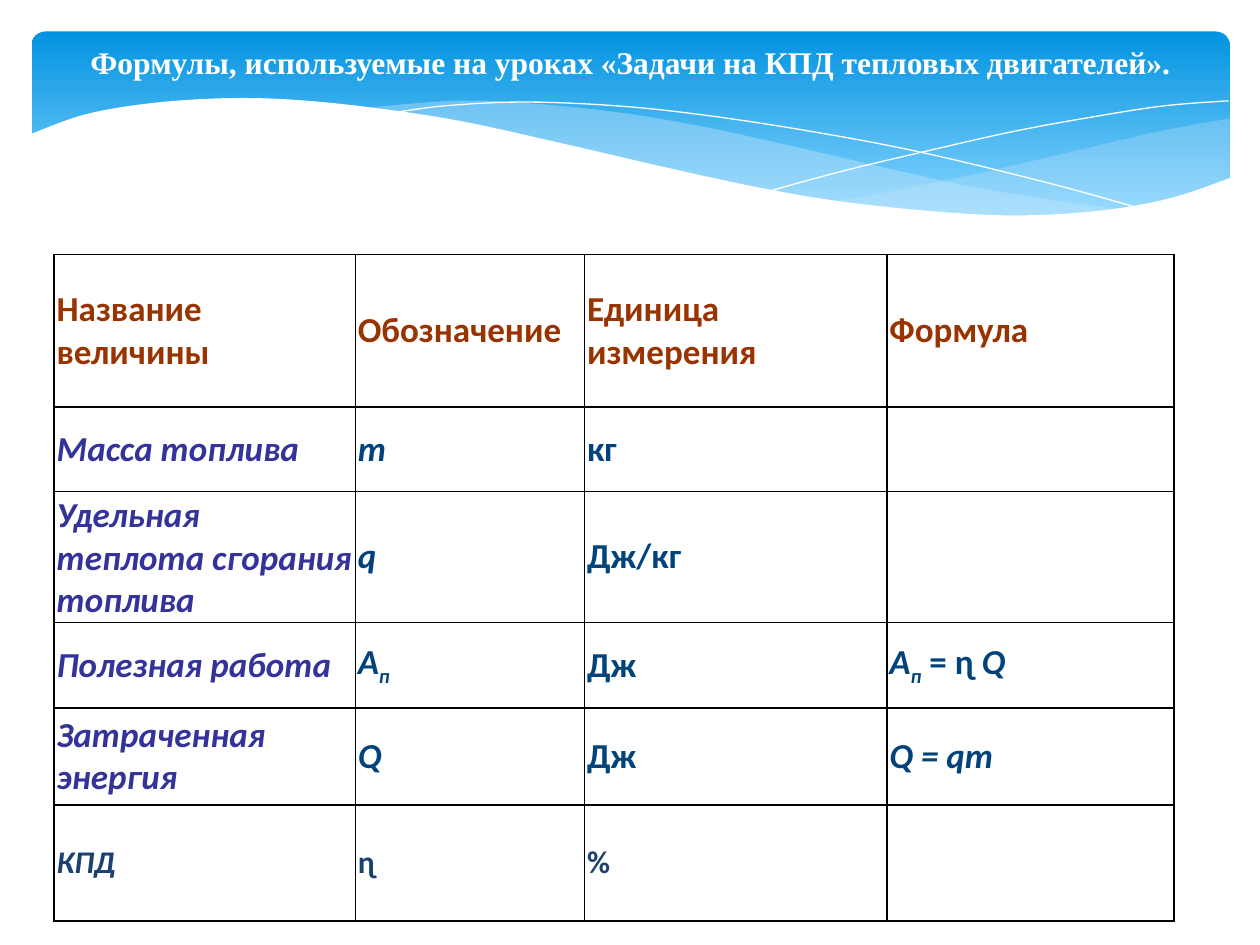
import pptx
import pptx.dml.color
import pptx.enum.text
import pptx.util
from lxml import etree
from pptx.oxml.ns import qn
from pptx.util import Inches


def color(code):
    return pptx.dml.color.RGBColor.from_string(code)


def smooth(knots, steps=6):
    """Points of a Catmull-Rom curve through the knots."""
    ends = [knots[0], *knots, knots[-1]]
    points = []
    for a, b, c, d in zip(ends, ends[1:], ends[2:], ends[3:]):
        for step in range(steps):
            t = step / steps
            points.append(tuple(
                q + t / 2 * (r - p + t * (2 * p - 5 * q + 4 * r - s
                                          + t * (3 * (q - r) + s - p)))
                for p, q, r, s in zip(a, b, c, d)))
    return points + [knots[-1]]


class SlideMaker:
    border = "000000"
    inset = Inches(0.02)

    def __init__(self, slide):
        self.slide = slide

    def panel(self, left, top, width, height, radius, stops):
        shape = self.slide.shapes.add_shape(
            pptx.enum.shapes.MSO_SHAPE.ROUNDED_RECTANGLE,
            Inches(left), Inches(top), Inches(width), Inches(height))
        shape.adjustments[0] = radius
        shape.shadow.inherit = False
        shape.line.fill.background()
        shape.fill.gradient()
        shape.fill.gradient_angle = 270
        for stop, (position, code) in zip(shape.fill.gradient_stops, stops):
            stop.position = position
            stop.color.rgb = color(code)

    def outline(self, points, fill=None, alpha=None, line=None):
        points = [(Inches(x), Inches(y)) for x, y in points]
        builder = self.slide.shapes.build_freeform(*points[0])
        builder.add_line_segments(points[1:], close=fill is not None)
        shape = builder.convert_to_shape()
        shape.shadow.inherit = False
        if fill:
            shape.fill.solid()
            shape.fill.fore_color.rgb = color(fill)
        else:
            shape.fill.background()
        if alpha:
            tint = shape.fill._xPr.find(".//" + qn("a:srgbClr"))
            etree.SubElement(tint, qn("a:alpha"), val=str(alpha * 1000))
        if line:
            shape.line.color.rgb = color(line)
            shape.line.width = 0
        else:
            shape.line.fill.background()

    def span(self, para, text, size, font, code, italic=False, baseline=0):
        span = para.add_run()
        span.text = text
        span.font.size = pptx.util.Pt(size)
        span.font.name = font
        span.font.bold = True
        span.font.italic = italic
        span.font.color.rgb = color(code)
        if baseline:
            span._r.get_or_add_rPr().set("baseline", str(baseline * 1000))

    def title(self, left, top, width, height, text):
        box = self.slide.shapes.add_textbox(
            Inches(left), Inches(top), Inches(width), Inches(height))
        box.text_frame.word_wrap = True
        para = box.text_frame.paragraphs[0]
        para.alignment = pptx.enum.text.PP_ALIGN.CENTER
        self.span(para, text, 18, "Times New Roman", "FFFFFF")

    def cell(self, cell, spans, size, code):
        cell.fill.background()
        cell.vertical_anchor = pptx.enum.text.MSO_ANCHOR.MIDDLE
        cell.margin_left = cell.margin_right = self.inset
        cell.margin_top = cell.margin_bottom = self.inset
        for text, italic, baseline in spans:
            self.span(cell.text_frame.paragraphs[0], text, size, "Calibri",
                      code, italic, baseline)
        # Borders stand before the fill in the cell properties
        properties = cell._tc.get_or_add_tcPr()
        for index, side in enumerate("LRTB"):
            edge = etree.Element(qn("a:ln" + side), w="12700")
            solid = etree.SubElement(edge, qn("a:solidFill"))
            etree.SubElement(solid, qn("a:srgbClr"), val=self.border)
            properties.insert(index, edge)

    def table(self, left, top, widths, heights, rows, style):
        frame = self.slide.shapes.add_table(
            len(heights), len(widths), Inches(left), Inches(top),
            Inches(sum(widths)), Inches(sum(heights)))
        table = frame.table
        table.first_row = table.horz_banding = False
        for column, width in zip(table.columns, widths):
            column.width = Inches(width)
        for row, height in zip(table.rows, heights):
            row.height = Inches(height)
        for r, row in enumerate(rows):
            for c, spans in enumerate(row):
                self.cell(table.cell(r, c), spans, *style(r, c))


def plain(text):
    return [(text, False, 0)]


def italic(text):
    return [(text, True, 0)]


def cell_style(row, column):
    """Size and colour of the text in a cell."""
    if row == 0:
        return 20, "993300"
    if row == 5:
        return 18, "1B4171"
    return 20, "333399" if column == 0 else "03437C"


USEFUL_WORK = [("А", True, 0), ("п", True, -25)]
ROWS = [
    [plain("Название величины"), plain("Обозначение"),
     plain("Единица измерения"), plain("Формула")],
    [italic("Масса топлива"), italic("m"), plain("кг"), []],
    [italic("Удельная теплота сгорания топлива"), italic("q"),
     plain("Дж/кг"), []],
    [italic("Полезная работа"), USEFUL_WORK, plain("Дж"),
     USEFUL_WORK + plain(" = ɳ ") + italic("Q")],
    [italic("Затраченная энергия"), italic("Q"), plain("Дж"),
     italic("Q = qm")],
    [italic("КПД"), plain("ɳ"), plain("%"), []],
]

# Wave edges, in inches
RIGHT_TOP = [(9.76, 0.94), (9.21, 1.04), (8.61, 1.18), (7.79, 1.37),
             (7.06, 1.52), (6.61, 1.6)]
RIGHT_BOTTOM = [(6.61, 1.6), (7.19, 1.67), (7.81, 1.72), (8.35, 1.72),
                (8.89, 1.66), (9.35, 1.56), (9.76, 1.41)]
MIDDLE_TOP = [(8.93, 1.67), (8.37, 1.59), (7.75, 1.49), (7.06, 1.34),
              (6.29, 1.16), (5.55, 1), (4.89, 0.89), (4.2, 0.82),
              (3.61, 0.8), (2.86, 0.86)]
MIDDLE_BOTTOM = [(2.86, 0.86), (3.62, 0.97), (4.49, 1.16), (5.3, 1.35),
                 (6.01, 1.5), (6.65, 1.61), (7.36, 1.69), (8.07, 1.73),
                 (8.57, 1.71), (8.93, 1.67)]
FALLING_LINE = [(3.09, 0.9), (3.53, 0.84), (4.16, 0.81), (4.89, 0.84),
                (5.56, 0.91), (6.36, 1.03), (7.27, 1.2), (8.31, 1.45),
                (9.07, 1.66)]
RISING_LINE = [(6.13, 1.51), (6.72, 1.35), (7.48, 1.17), (8.06, 1.04),
               (8.66, 0.93), (9.24, 0.84), (9.75, 0.8)]
FRONT_EDGE = [(9.77, 1.41), (9.3, 1.57), (8.75, 1.67), (8.09, 1.71),
              (7.44, 1.68), (6.68, 1.6), (6.03, 1.49), (5.29, 1.33),
              (4.47, 1.14), (3.65, 0.96), (2.92, 0.85), (2.3, 0.79),
              (1.77, 0.78), (1.19, 0.82), (0.67, 0.91), (0.23, 1.07)]


def main():
    deck = pptx.Presentation()
    deck.slide_width, deck.slide_height = Inches(10), Inches(7.5)
    page = SlideMaker(deck.slides.add_slide(deck.slide_layouts[6]))

    # Header panel with waves
    page.panel(0.25, 0.25, 9.51, 1.56, 0.071,
               [(0, "0293E0"), (0.9, "83D3FE")])
    page.outline(smooth(RIGHT_TOP) + smooth(RIGHT_BOTTOM), "C6E7FC", 29)
    page.outline(smooth(MIDDLE_TOP) + smooth(MIDDLE_BOTTOM), "C6E7FC", 40)
    for line in (FALLING_LINE, RISING_LINE):
        page.outline(smooth(line), line="FFFFFF")
    page.outline(smooth(FRONT_EDGE) + [(0.23, 2.24), (9.77, 2.24)], "FFFFFF")

    # Title
    page.title(0.28, 0.29, 9.45, 0.4,
               "Формулы, используемые на уроках "
               "«Задачи на КПД тепловых двигателей».")

    # Table of quantities
    page.table(0.43, 2.02, [2.39, 1.82, 2.4, 2.28],
               [1.21, 0.67, 0.86, 0.68, 0.77, 0.92], ROWS, cell_style)

    deck.save("out.pptx")


if __name__ == "__main__":
    main()
